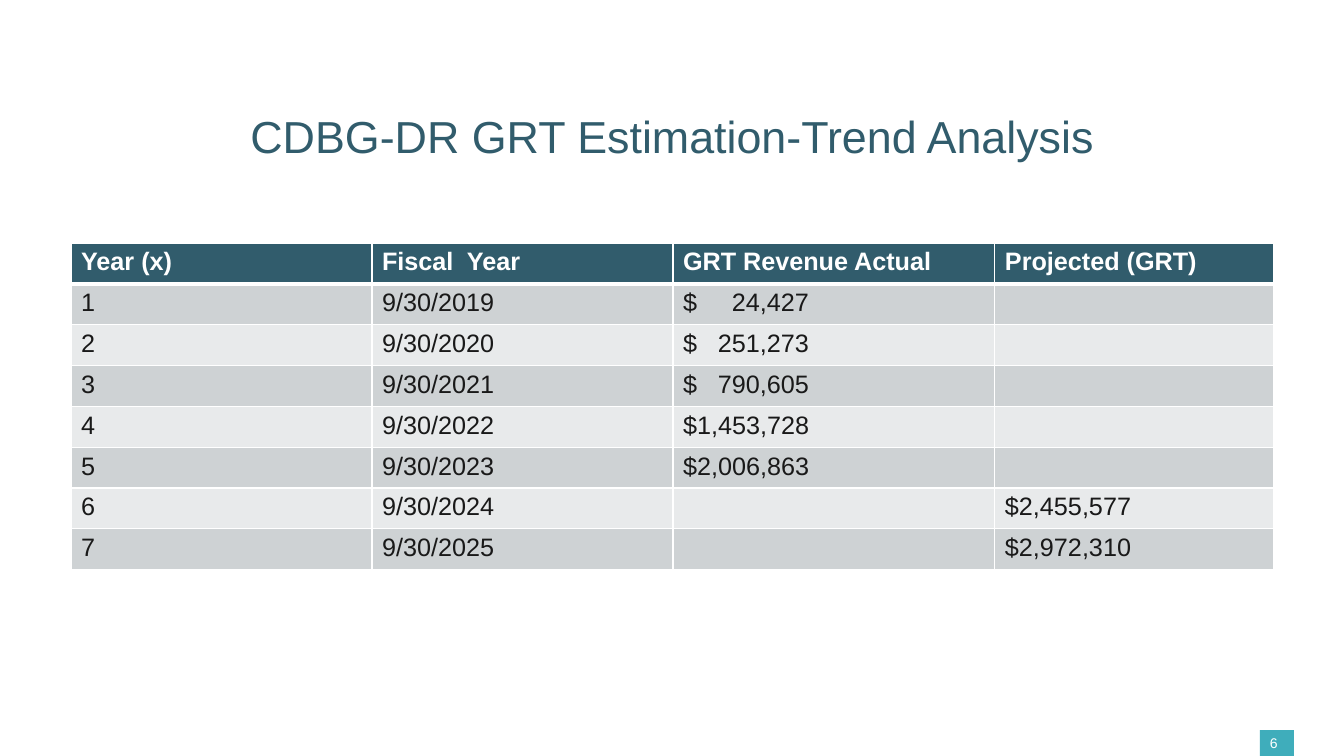
from lxml import etree
from pptx import Presentation
from pptx.dml.color import RGBColor
from pptx.enum.shapes import MSO_SHAPE
from pptx.enum.text import MSO_ANCHOR, PP_ALIGN
from pptx.oxml.ns import qn
from pptx.util import Emu, Pt

RECTANGLE = MSO_SHAPE.RECTANGLE
TOP = MSO_ANCHOR.TOP
LEFT, CENTER = PP_ALIGN.LEFT, PP_ALIGN.CENTER

WHITE = RGBColor(0xFF, 0xFF, 0xFF)
PETROL = RGBColor(0x31, 0x5C, 0x6C)
TEAL = RGBColor(0x3F, 0xAD, 0xBB)
INK = RGBColor(0x19, 0x19, 0x19)
BANDS = (RGBColor(0xCE, 0xD2, 0xD4), RGBColor(0xE8, 0xEA, 0xEB))

PX = 914400 / 100.8
SLIDE_SIZE = (1344, 756)
COLUMN_WIDTHS = (301, 301, 322, 279)
AMOUNT_EDGE = 126  # right edge of the amounts that stand apart from their $

REVENUE = [
    ("Year (x)", "Fiscal  Year", "GRT Revenue Actual", "Projected (GRT)"),
    ("1", "9/30/2019", "$\t24,427", ""),
    ("2", "9/30/2020", "$\t251,273", ""),
    ("3", "9/30/2021", "$\t790,605", ""),
    ("4", "9/30/2022", "$1,453,728", ""),
    ("5", "9/30/2023", "$2,006,863", ""),
    ("6", "9/30/2024", "", "$2,455,577"),
    ("7", "9/30/2025", "", "$2,972,310"),
]


def px(length):
    return Emu(round(length * PX))


def write(frame, text, size, color, bold=False, align=LEFT):
    paragraph = frame.paragraphs[0]
    paragraph.alignment = align
    run = paragraph.add_run()
    run.text = text
    run.font.color.rgb = color
    for name, value in {"name": "Arial", "size": Pt(size), "bold": bold}.items():
        setattr(run.font, name, value)
    return paragraph


def add_right_tab(paragraph, position):
    properties = paragraph._p.get_or_add_pPr()
    tabs = etree.SubElement(properties, qn("a:tabLst"))
    etree.SubElement(tabs, qn("a:tab"), pos=str(px(position)), algn="r")


def draw_borders(cell, widths):
    properties = cell._tc.get_or_add_tcPr()
    for side, width in widths.items():
        line = etree.SubElement(properties, qn(f"a:ln{side}"), w=str(Pt(width)))
        fill = etree.SubElement(line, qn("a:solidFill"))
        etree.SubElement(fill, qn("a:srgbClr"), val=str(WHITE))


def add_title(slide, left, top, width, height):
    frame = slide.shapes.add_textbox(*map(px, (left, top, width, height))).text_frame
    layout = {"word_wrap": True, "vertical_anchor": TOP, "margin_top": px(10)}
    for name, value in layout.items():
        setattr(frame, name, value)
    heading = write(frame, "CDBG-DR GRT Estimation-Trend Analysis", 32, PETROL, align=CENTER)
    heading.line_spacing = 0.9


def add_revenue_table(slide, left, top, width, height):
    box = map(px, (left, top, width, height))
    table = slide.shapes.add_table(len(REVENUE), len(COLUMN_WIDTHS), *box).table
    for column, column_width in zip(table.columns, COLUMN_WIDTHS):
        column.width = px(column_width)
    for r, values in enumerate(REVENUE):
        table.rows[r].height = px(height / len(REVENUE))
        header = r == 0
        # A thicker rule parts the header from the body
        borders = {"L": 1, "R": 1, "T": 3 if r == 1 else 1, "B": 3 if header else 1}
        for c, value in enumerate(values):
            cell = table.cell(r, c)
            draw_borders(cell, borders)
            cell.fill.solid()
            cell.fill.fore_color.rgb = PETROL if header else BANDS[(r - 1) % 2]
            entry = write(cell.text_frame, value, 18, WHITE if header else INK, header)
            if "\t" in value:
                add_right_tab(entry, AMOUNT_EDGE)


def add_page_number(slide, left, top, width, height):
    # Coloured tab in the corner
    corner = slide.shapes.add_shape(RECTANGLE, *map(px, (left, top, width, height)))
    corner.shadow.inherit = False
    corner.fill.solid()
    corner.fill.fore_color.rgb = TEAL
    corner.line.fill.background()
    # Number
    number = slide.shapes.add_textbox(*map(px, (left, top, width + 8, height + 8)))
    number.text_frame.word_wrap = True
    write(number.text_frame, "6", 10, WHITE)


def main():
    deck = Presentation()
    deck.slide_width, deck.slide_height = map(px, SLIDE_SIZE)
    slide = deck.slides.add_slide(deck.slide_layouts[6])
    add_page_number(slide, 1260, 730, 34, 26)
    add_revenue_table(slide, 71, 243, sum(COLUMN_WIDTHS), 327)
    add_title(slide, 71, 105, sum(COLUMN_WIDTHS), 61)
    deck.save("out.pptx")


if __name__ == "__main__":
    main()
